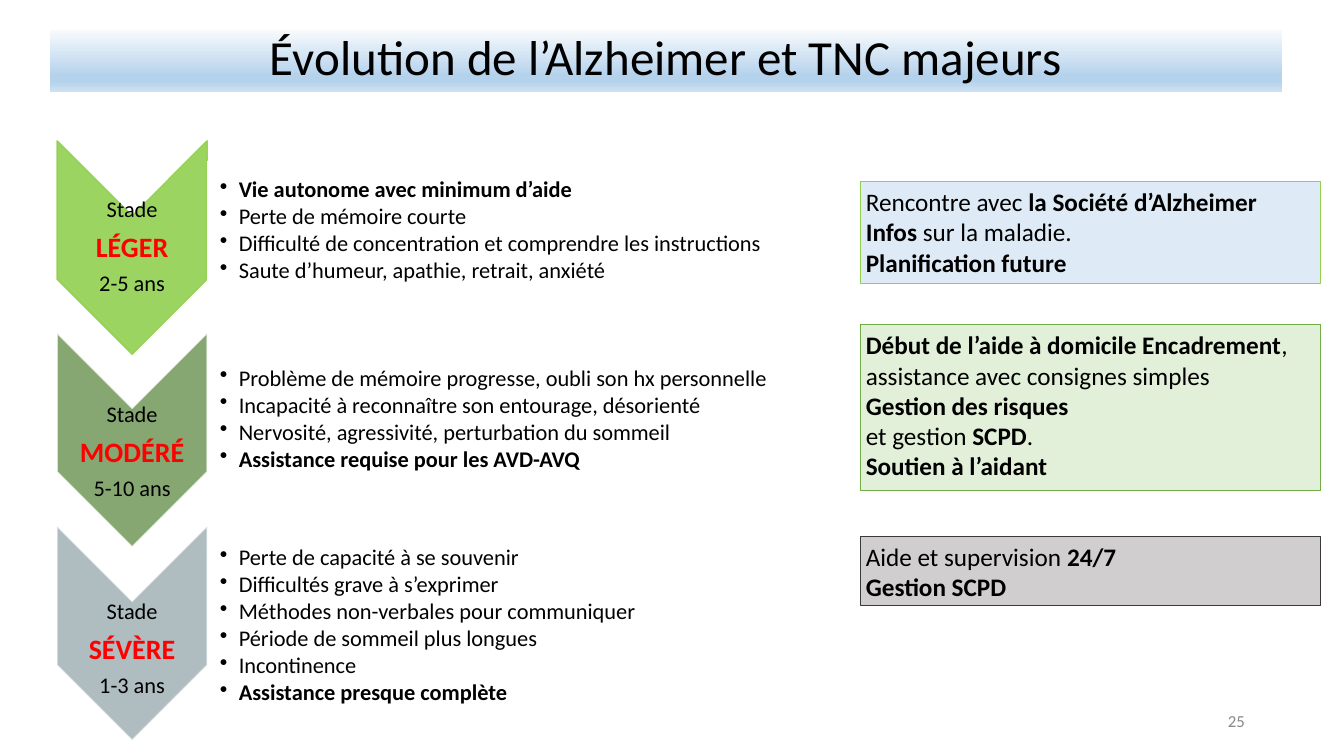
"""Build a slide on the stages of Alzheimer's disease and the support for each."""
from dataclasses import dataclass

from lxml import etree
from pptx import Presentation
from pptx.dml.color import RGBColor
from pptx.enum.shapes import MSO_SHAPE as Preset
from pptx.enum.text import MSO_ANCHOR as Anchor, PP_ALIGN as Align
from pptx.oxml.ns import qn
from pptx.shapes.autoshape import Shape
from pptx.slide import Slide
from pptx.text.text import TextFrame, _Paragraph as Paragraph
from pptx.util import Cm, Pt

FONT = "Calibri"
BLACK = RGBColor(0x00, 0x00, 0x00)
WHITE = RGBColor(0xFF, 0xFF, 0xFF)
RED = RGBColor(0xFF, 0x00, 0x00)
GREY = RGBColor(0x88, 0x88, 0x88)
LIME = RGBColor(0x92, 0xD0, 0x50)
OLIVE = RGBColor(0x54, 0x82, 0x35)
SLATE = RGBColor(0x60, 0x7A, 0x83)
GREEN = RGBColor(0x70, 0xAD, 0x47)
CHARCOAL = RGBColor(0x3B, 0x38, 0x38)
PALE_BLUE = RGBColor(0xDE, 0xEB, 0xF7)
PALE_GREEN = RGBColor(0xE2, 0xF0, 0xD9)
PALE_GREY = RGBColor(0xD0, 0xCE, 0xCE)
BANNER_STOPS = (
    (0, RGBColor(0xF7, 0xFA, 0xFD)),
    (74, RGBColor(0xB5, 0xD2, 0xEC)),
    (83, RGBColor(0xB5, 0xD2, 0xEC)),
    (100, RGBColor(0xCE, 0xE1, 0xF2)),
)


@dataclass(frozen=True)
class Stage:
    """A stage: its arrow, label and symptoms, with centre heights in cm; *…* is bold."""
    name: str
    duration: str
    fill: RGBColor
    line: RGBColor
    opacity: int
    arrow_y: float
    label_y: float
    panel_y: float
    symptoms: tuple[str, ...]


@dataclass(frozen=True)
class Note:
    """A support box, with top and height in cm; *…* is bold."""
    top: float
    height: float
    fill: RGBColor
    line: RGBColor
    lines: tuple[str, ...]


STAGES = (
    Stage("LÉGER", "2-5 ans", LIME, LIME, 90, 6.24, 6.22, 5.82, (
        "*Vie autonome avec minimum d’aide*",
        "Perte de mémoire courte",
        "Difficulté de concentration et comprendre les instructions",
        "Saute d’humeur, apathie, retrait, anxiété")),
    Stage("MODÉRÉ", "5-10 ans", OLIVE, WHITE, 70, 11.09, 11.4, 10.57, (
        "Problème de mémoire progresse, oubli son hx personnelle",
        "Incapacité à reconnaître son entourage, désorienté",
        "Nervosité, agressivité, perturbation du sommeil",
        "*Assistance requise pour les AVD-AVQ*")),
    Stage("SÉVÈRE", "1-3 ans", SLATE, WHITE, 50, 15.96, 16.36, 15.77, (
        "Perte de capacité à se souvenir",
        "Difficultés grave à s’exprimer",
        "Méthodes non-verbales pour communiquer",
        "Période de sommeil plus longues",
        "Incontinence",
        "*Assistance presque complète*")),
)
NOTES = (
    Note(4.57, 2.57, PALE_BLUE, LIME, (
        "Rencontre avec *la Société d’Alzheimer*",
        "*Infos* sur la maladie.",
        "*Planification future*")),
    Note(8.18, 4.19, PALE_GREEN, GREEN, (
        "*Début de l’aide à domicile Encadrement*, assistance avec consignes simples",
        "*Gestion des risques*",
        "et gestion *SCPD*.",
        "*Soutien à l’aidant*")),
    Note(13.51, 1.75, PALE_GREY, CHARCOAL, (
        "Aide et supervision *24/7*",
        "*Gestion SCPD*")),
)


def add_preset(page: Slide, preset: Preset, center_x: float, center_y: float,
               width: float, height: float) -> Shape:
    """Add a shadowless preset shape around a centre given in cm."""
    shape = page.shapes.add_shape(preset, Cm(center_x - width / 2),
                                  Cm(center_y - height / 2), Cm(width), Cm(height))
    shape.shadow.inherit = False
    return shape


def paint(shape: Shape, fill: RGBColor, line: RGBColor, width: float,
          fill_opacity: int = 100, line_opacity: int = 100) -> None:
    """Give a shape solid fill and line colours with opacities in percent."""
    shape.fill.solid()
    shape.fill.fore_color.rgb = fill
    shape.line.color.rgb = line
    shape.line.width = Pt(width)
    colors = shape.element.spPr.iter(qn("a:srgbClr"))
    for color, opacity in zip(colors, (fill_opacity, line_opacity)):
        if opacity < 100:
            etree.SubElement(color, qn("a:alpha"), val=str(opacity * 1000))


def prepare(frame: TextFrame, inset: float, anchor: Anchor) -> None:
    """Set wrapping, equal insets in cm and the anchor of a text frame."""
    frame.word_wrap = True
    frame.vertical_anchor = anchor
    frame.margin_left = frame.margin_right = Cm(inset)
    frame.margin_top = frame.margin_bottom = Cm(inset)


def add_textbox(page: Slide, left: float, center_y: float,
                width: float, height: float) -> TextFrame:
    """Add a vertically centred text box and return its frame."""
    box = page.shapes.add_textbox(Cm(left), Cm(center_y - height / 2), Cm(width), Cm(height))
    prepare(box.text_frame, 0.03, Anchor.MIDDLE)
    return box.text_frame


def next_paragraph(frame: TextFrame, index: int, before: float = 0) -> Paragraph:
    """Return the paragraph at an index, spaced from any paragraph above it."""
    if index == 0:
        return frame.paragraphs[0]
    para = frame.add_paragraph()
    para.space_before = Pt(before)
    return para


def write(para: Paragraph, text: str, size: float, color: RGBColor = BLACK,
          align: Align = Align.LEFT) -> None:
    """Write text whose *starred* parts are bold."""
    para.alignment = align
    para.font.name = FONT
    para.font.size = Pt(size)
    para.font.color.rgb = color
    for index, part in enumerate(text.split("*")):
        if part:
            span = para.add_run()
            span.text = part
            span.font.bold = index % 2 == 1


def add_bullet(para: Paragraph) -> None:
    """Give a paragraph a hanging round bullet."""
    properties = para._p.get_or_add_pPr()
    properties.set("marL", str(Cm(0.48)))
    properties.set("indent", str(-Cm(0.48)))
    etree.SubElement(properties, qn("a:buChar"), char="•")


def draw_stage(page: Slide, stage: Stage) -> None:
    """Draw the arrow, label, panel and symptoms of a stage."""
    arrow = add_preset(page, Preset.CHEVRON, 3.33, stage.arrow_y, 5.38, 3.78)
    arrow.rotation = 90
    paint(arrow, stage.fill, stage.line, 1, stage.opacity, stage.opacity)

    label = add_textbox(page, 1.44, stage.label_y, 3.78, 2.6)
    rows = (("Stade", 16, BLACK, 0), (f"*{stage.name}*", 20, RED, 8),
            (stage.duration, 16, BLACK, 6))
    for index, (text, size, color, before) in enumerate(rows):
        para = next_paragraph(label, index, before)
        para.line_spacing = 0.9
        write(para, text, size, color, Align.CENTER)

    panel = add_preset(page, Preset.ROUND_2_SAME_RECTANGLE, 19.33, stage.panel_y, 3.51, 28.19)
    panel.rotation = 90
    paint(panel, WHITE, WHITE, 1, 90, stage.opacity)

    symptoms = add_textbox(page, 5.51, stage.panel_y, 27.74, 0.73 * len(stage.symptoms))
    for index, text in enumerate(stage.symptoms):
        para = next_paragraph(symptoms, index, 2)
        para.line_spacing = 0.9
        add_bullet(para)
        write(para, text, 16)


def draw_note(page: Slide, note: Note) -> None:
    """Draw a support box."""
    box = add_preset(page, Preset.RECTANGLE, 27.49, note.top + note.height / 2, 11.6, note.height)
    paint(box, note.fill, note.line, 0.75)
    prepare(box.text_frame, 0.13, Anchor.TOP)
    for index, text in enumerate(note.lines):
        write(next_paragraph(box.text_frame, index), text, 18)


def draw_banner(page: Slide) -> None:
    """Draw the title on its gradient band."""
    banner = add_preset(page, Preset.RECTANGLE, 16.79, 1.54, 31.04, 1.55)
    banner.line.fill.background()
    banner.fill.gradient()
    banner.fill.gradient_angle = 270
    stops = next(banner.element.spPr.iter(qn("a:gsLst")))
    for stop in list(stops):
        stops.remove(stop)
    for position, color in BANNER_STOPS:
        stop = etree.SubElement(stops, qn("a:gs"), pos=str(position * 1000))
        etree.SubElement(stop, qn("a:srgbClr"), val=str(color))
    prepare(banner.text_frame, 0.13, Anchor.MIDDLE)
    para = banner.text_frame.paragraphs[0]
    para.line_spacing = 0.81
    write(para, "Évolution de l’Alzheimer et TNC majeurs", 35, align=Align.CENTER)


def main() -> None:
    """Build and save the deck."""
    deck = Presentation()
    deck.slide_width, deck.slide_height = Cm(33.87), Cm(19.05)
    page = deck.slides.add_slide(deck.slide_layouts[6])
    for stage in STAGES:
        draw_stage(page, stage)
    for note in NOTES:
        draw_note(page, note)
    draw_banner(page)
    number = add_textbox(page, 30.4, 18.17, 1.0, 0.69)
    write(number.paragraphs[0], "25", 12, GREY, Align.RIGHT)
    deck.save("out.pptx")


if __name__ == "__main__":
    main()
